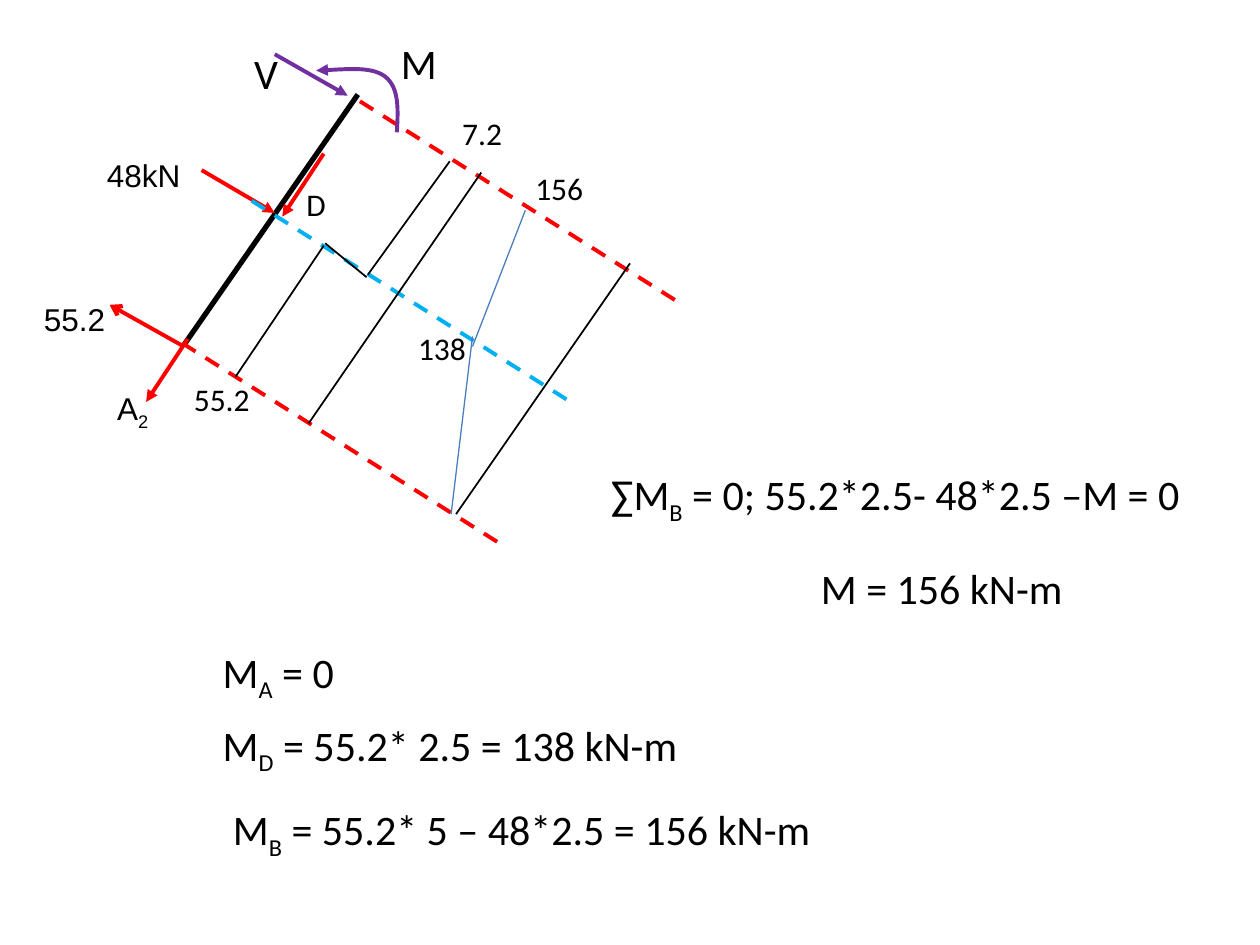
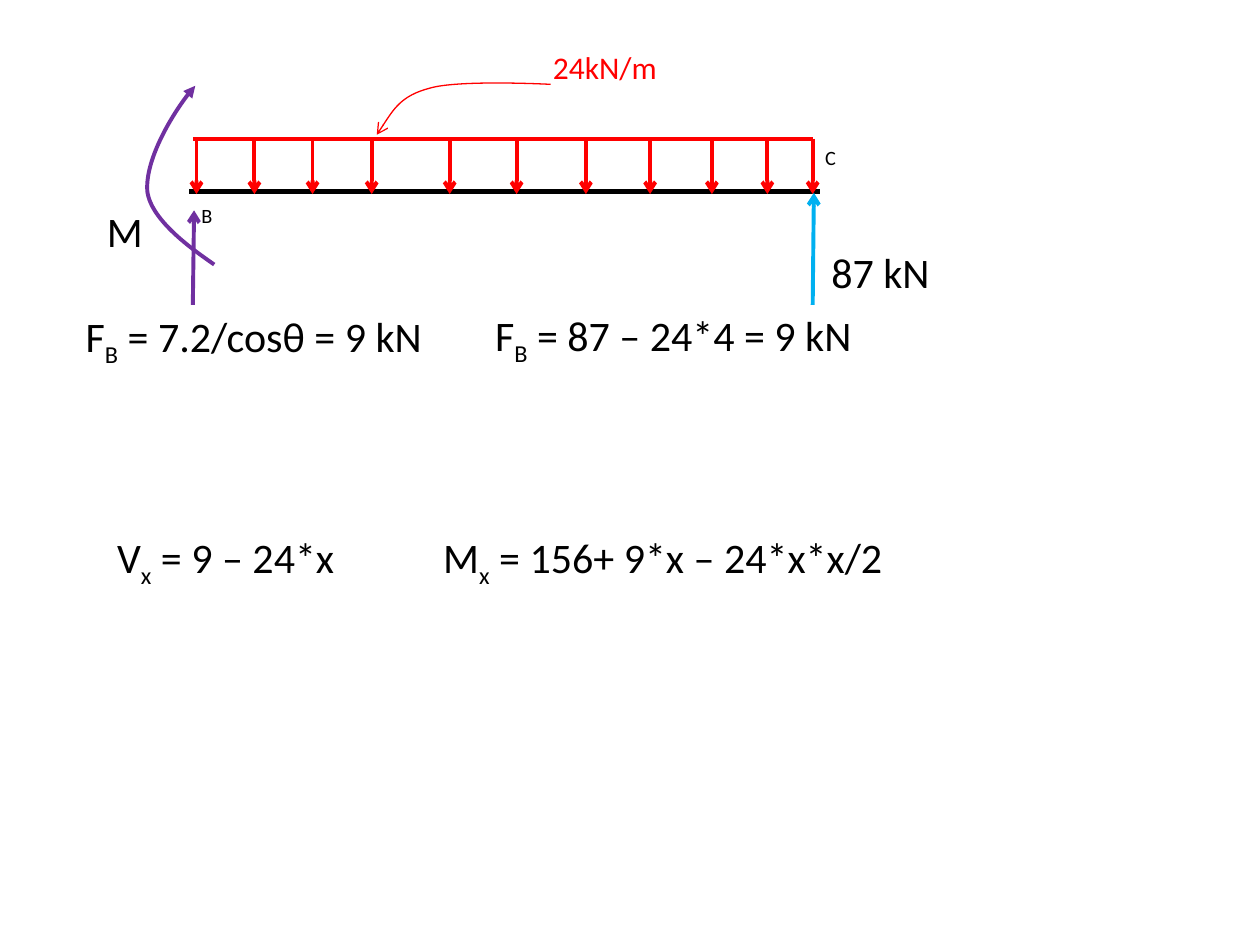
from dataclasses import dataclass

from lxml import etree
from pptx import Presentation
from pptx.dml.color import RGBColor
from pptx.enum.dml import MSO_LINE
from pptx.enum.shapes import MSO_CONNECTOR
from pptx.enum.text import MSO_AUTO_SIZE
from pptx.oxml.ns import qn
from pptx.util import Pt

DASH = MSO_LINE.DASH
STRAIGHT = MSO_CONNECTOR.STRAIGHT
FIT = MSO_AUTO_SIZE.SHAPE_TO_FIT_TEXT
SOLID, OPEN = "triangle", "arrow"


@dataclass(frozen=True)
class Theme:
    black: RGBColor = RGBColor(0, 0, 0)
    red: RGBColor = RGBColor(255, 0, 0)
    sky: RGBColor = RGBColor(0, 176, 240)
    blue: RGBColor = RGBColor(75, 126, 188)
    violet: RGBColor = RGBColor(112, 48, 160)
    font: str = "Calibri"
    plain: str = "Arial"
    label: int = 18
    point: int = 20
    math: int = 24
    hair: float = 0.75
    thin: float = 1
    bold: float = 2.25
    beam: float = 3


class Deck:
    def __init__(self, theme):
        self.theme = theme
        self.deck = Presentation()
        self.deck.slide_width, self.deck.slide_height = Pt(720), Pt(540)
        self.slide = None

    def page(self):
        self.slide = self.deck.slides.add_slide(self.deck.slide_layouts[6])

    def pen(self, shape, color, width, tip=None, dash=None):
        shape.line.color.rgb = color
        shape.line.width = Pt(width)
        if dash:
            shape.line.dash_style = dash
        props = shape._element.spPr
        if tip:
            etree.SubElement(props.find(qn("a:ln")), qn("a:tailEnd"), type=tip)
        etree.SubElement(props, qn("a:effectLst"))

    def line(self, start, end, color, width, tip=None, dash=None):
        ends = [Pt(v) for v in (*start, *end)]
        shape = self.slide.shapes.add_connector(STRAIGHT, *ends)
        self.pen(shape, color, width, tip, dash)

    def curve(self, spots, color, width, tip):
        first, *rest = [(Pt(x), Pt(y)) for x, y in spots]
        form = self.slide.shapes.build_freeform(*first)
        form.add_line_segments(rest, close=False)
        shape = form.convert_to_shape()
        shape.fill.background()
        legs = list(shape._element.iter(qn("a:lnTo")))
        trace = legs[0].getparent()
        for i in range(0, len(legs), 3):
            bend = etree.SubElement(trace, qn("a:cubicBezTo"))
            for leg in legs[i:i + 3]:
                bend.append(leg[0])
                trace.remove(leg)
        self.pen(shape, color, width, tip)

    def text(self, text, left, top, width, size, font=None, color=None, wrap=True):
        box = self.slide.shapes.add_textbox(Pt(left), Pt(top), Pt(width), Pt(size * 1.2 + 7.2))
        frame = box.text_frame
        frame.word_wrap = wrap
        frame.auto_size = FIT
        para = frame.paragraphs[0]
        para.font.size = Pt(size)
        para.font.name = font or self.theme.font
        para.font.color.rgb = color or self.theme.black
        head, *tails = text.split("_")
        self.run(para, head)
        for tail in tails:
            self.run(para, tail[0], low=True)
            self.run(para, tail[1:])

    def run(self, para, text, low=False):
        if text:
            run = para.add_run()
            run.text = text
            if low:
                run._r.get_or_add_rPr().set("baseline", "-25000")

    def save(self):
        self.deck.save("out.pptx")


def column(deck):
    t = deck.theme
    deck.page()
    deck.line((204.5, 54), (105, 197.3), t.black, t.beam)
    for start, end, color, tip in (
        ((107.3, 193.7), (83.5, 229.7), t.red, SOLID),
        ((105.1, 198), (62.6, 174.2), t.red, OPEN),
        ((115.2, 97.2), (157, 121.7), t.red, SOLID),
        ((185, 87.8), (161.3, 123.8), t.red, SOLID),
        ((157, 31), (198.7, 54.7), t.violet, SOLID),
    ):
        deck.line(start, end, color, t.bold, tip)

    for x, y, color in ((101.5, 194.4, t.red), (203, 56.2, t.red), (141.1, 113, t.sky)):
        deck.line((x + 182.6, y + 115.2), (x, y), color, t.bold, dash=DASH)

    for start, end in (
        ((360, 150.5), (260.6, 293.8)),
        ((209.5, 158.4), (185.8, 139)),
        ((275, 98.6), (176.4, 241.9)),
        ((185, 140.4), (134.6, 215.3)),
        ((257, 92.2), (210.2, 157)),
    ):
        deck.line(start, end, t.black, t.thin)
    deck.line((257.8, 293.8), (270, 192.2), t.blue, t.hair)
    deck.line((270, 198), (300.2, 120.2), t.blue, t.hair)
    deck.curve([(226.8, 75.6), (227.5, 62.6), (228.2, 50.4), (220.3, 43.9),
                (213.1, 38.2), (196.6, 39.6), (180.7, 40.3)], t.violet, t.bold, SOLID)

    for text, left, top, width in (
        ("55.2", 18, 167.8, 60), ("A_2", 59.8, 218.9, 42), ("48kN", 54, 85.7, 66),
    ):
        deck.text(text, left, top, width, t.label, t.plain)
    for text, left, top, width in (
        ("55.2", 103.7, 213.8, 46.8), ("7.2", 257, 61.9, 37.4),
        ("156", 298.8, 92.9, 42.5), ("138", 231.8, 184.3, 42.5),
    ):
        deck.text(text, left, top, width, t.label, wrap=False)
    deck.text("D", 168, 102.2, 54, t.label)
    for text, left, top, width in (
        ("V", 138.2, 23.8, 42),
        ("M", 222, 18, 42),
        ("∑M_B = 0; 55.2*2.5- 48*2.5 –M = 0", 342, 264.2, 354),
        ("M = 156 kN-m", 462, 318.2, 162),
        ("M_A = 0", 120.2, 365.8, 108),
        ("M_D = 55.2* 2.5 = 138 kN-m", 120.2, 407.5, 354),
        ("M_B = 55.2* 5 – 48*2.5 = 156 kN-m", 126, 455.8, 354),
    ):
        deck.text(text, left, top, width, t.math)


def beam(deck):
    t = deck.theme
    deck.page()
    deck.line((108, 109.4), (468.7, 109.4), t.black, t.beam)
    deck.line((110.2, 79.2), (464.4, 79.2), t.red, t.bold)
    for x in (112.3, 145.4, 178.6, 212.4, 257, 295.2, 334.8, 371.5, 406.8, 438.5, 464.4):
        deck.line((x, 79.2), (x, 110.9), t.red, t.bold, OPEN)
    deck.line((464.4, 174.2), (465.1, 110.2), t.sky, t.bold, OPEN)
    deck.line((110.2, 174.2), (110.9, 120.2), t.violet, t.bold, OPEN)
    deck.curve([(314.6, 48.2), (314.6, 48.2), (262.1, 45.4), (245.5, 50.4),
                (229, 54.7), (222.5, 66.2), (215.3, 77)], t.red, t.hair, OPEN)
    deck.curve([(122.4, 151.2), (112.3, 144), (86.4, 126.7), (84.2, 109.4),
                (82.8, 92.2), (100.8, 60.5), (111.6, 49)], t.violet, t.bold, SOLID)

    deck.text("24kN/m", 308.9, 23.8, 144.7, t.label, color=t.red)
    deck.text("_B", 108, 99.4, 33, t.point)
    deck.text("_C", 464.4, 66.2, 33, t.point)
    for text, left, top, width in (
        ("87 kN", 468, 137.5, 102),
        ("M", 54, 113.8, 66),
        ("F_B = 7.2/cosθ = 9 kN", 41.8, 174.2, 234),
        ("F_B = 87 – 24*4 = 9 kN", 275.8, 173.5, 252),
        ("V_x = 9 – 24*x", 59.8, 300.2, 156),
        ("M_x = 156+ 9*x – 24*x*x/2", 246.2, 300.2, 288),
    ):
        deck.text(text, left, top, width, t.math)


def main():
    deck = Deck(Theme())
    column(deck)
    beam(deck)
    deck.save()


if __name__ == "__main__":
    main()
